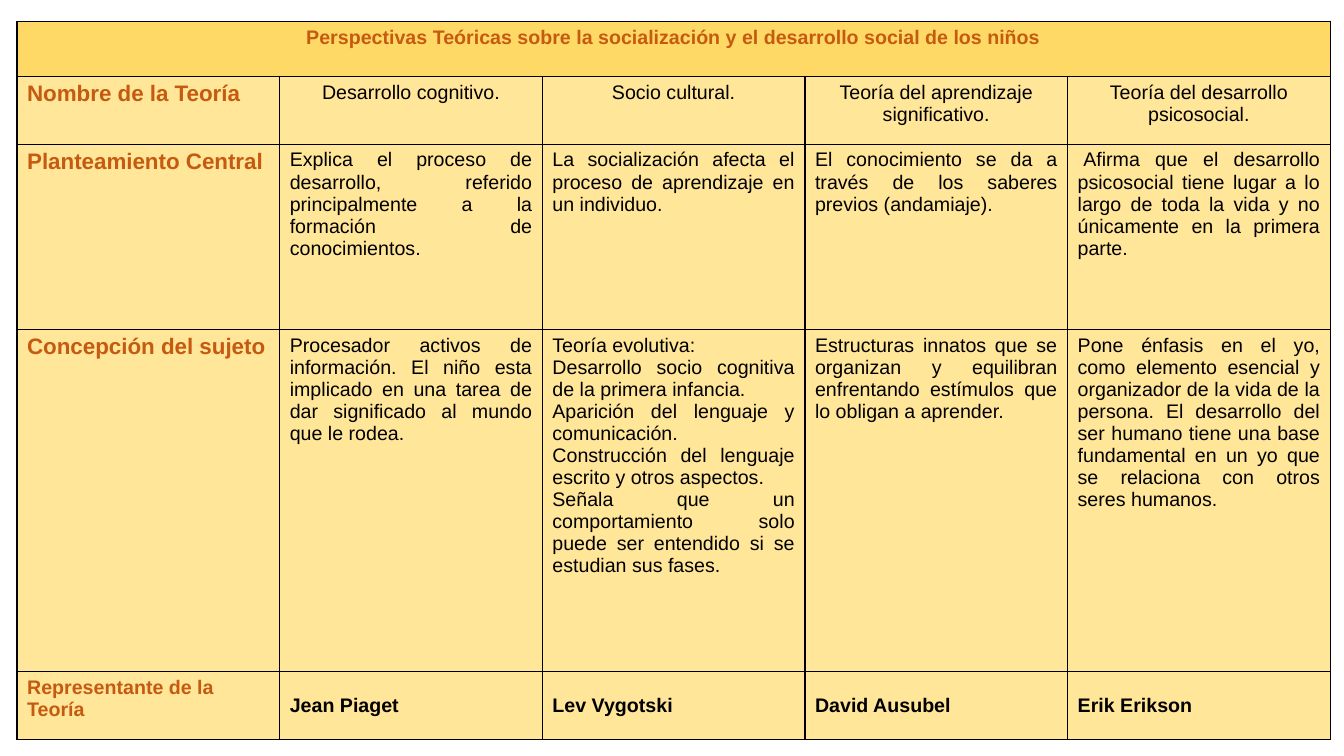
import lxml.etree
import pptx
import pptx.dml.color
import pptx.enum.text
import pptx.oxml.ns
import pptx.util

ALIGN = pptx.enum.text.PP_ALIGN
ANCHOR = pptx.enum.text.MSO_ANCHOR
RUST, BLACK, GOLD, CREAM = "C55A11", "000000", "FFD966", "FFE699"

TITLE = "Perspectivas Teóricas sobre la socialización y el desarrollo social de los niños"
LABELS = ["Nombre de la Teoría", "Planteamiento Central",
          "Concepción del sujeto", "Representante de la Teoría"]
NAMES = ["Desarrollo cognitivo.", "Socio cultural.",
         "Teoría del aprendizaje significativo.",
         "Teoría del desarrollo psicosocial."]
IDEAS = [
    "Explica el proceso de desarrollo, referido principalmente a la formación de conocimientos.",
    "La socialización afecta el proceso de aprendizaje en un individuo.",
    "El conocimiento se da a través de los saberes previos (andamiaje).",
    "Afirma que el desarrollo psicosocial tiene lugar a lo largo de toda la vida "
    "y no únicamente en la primera parte.",
]
VIEWS = [
    "Procesador activos de información. El niño esta implicado en una tarea de "
    "dar significado al mundo que le rodea.",
    "Teoría evolutiva:\n"
    "Desarrollo socio cognitiva de la primera infancia.\n"
    "Aparición del lenguaje y comunicación.\n"
    "Construcción del lenguaje escrito y otros aspectos.\n"
    "Señala que un comportamiento solo puede ser entendido si se estudian sus fases.",
    "Estructuras innatos que se organizan y equilibran enfrentando estímulos "
    "que lo obligan a aprender.",
    "Pone énfasis en el yo, como elemento esencial y organizador de la vida de la "
    "persona. El desarrollo del ser humano tiene una base fundamental en un yo "
    "que se relaciona con otros seres humanos.",
]
PEOPLE = ["Jean Piaget", "Lev Vygotski", "David Ausubel", "Erik Erikson"]
BODY = [
    (NAMES, {"align": ALIGN.CENTER}),
    (IDEAS, {"align": ALIGN.JUSTIFY}),
    (VIEWS, {"align": ALIGN.JUSTIFY}),
    (PEOPLE, {"align": ALIGN.JUSTIFY, "bold": True}),
]
HEIGHTS = [39.4, 48.4, 132.4, 244.6, 48.6]


def color(code):
    """Turn a hex string into a colour."""
    return pptx.dml.color.RGBColor.from_string(code)


def write(frame, text, size=14, ink=BLACK, bold=False, align=ALIGN.LEFT, indent=0):
    """Fill a text frame with one paragraph per line of text."""
    for n, line in enumerate(text.split("\n")):
        para = frame.paragraphs[0] if n == 0 else frame.add_paragraph()
        para.alignment = align
        if indent:
            para._p.get_or_add_pPr().set("indent", str(pptx.util.Pt(indent)))
        run = para.add_run()
        run.text = line
        run.font.name = "Arial"
        run.font.size = pptx.util.Pt(size)
        run.font.bold = bold
        run.font.color.rgb = color(ink)


def paint(cell, fill):
    """Give a cell its fill and four thin black borders."""
    cell.fill.solid()
    cell.fill.fore_color.rgb = color(fill)
    props = cell._tc.get_or_add_tcPr()
    qn = pptx.oxml.ns.qn
    for spot, side in enumerate(["a:lnL", "a:lnR", "a:lnT", "a:lnB"]):
        line = lxml.etree.Element(qn(side), w=str(pptx.util.Pt(1)))
        solid = lxml.etree.SubElement(line, qn("a:solidFill"))
        lxml.etree.SubElement(solid, qn("a:srgbClr"), val=BLACK)
        props.insert(spot, line)


def matrix(slide, left, top, width, heights):
    """Place the table of theories in the given box."""
    cols = len(NAMES) + 1
    frame = slide.shapes.add_table(
        len(heights), cols, pptx.util.Pt(left), pptx.util.Pt(top),
        pptx.util.Pt(width), pptx.util.Pt(sum(heights)))
    table = frame.table
    for col in table.columns:
        col.width = pptx.util.Pt(width / cols)
    for n, height in enumerate(heights):
        table.rows[n].height = pptx.util.Pt(height)
        for col in range(cols):
            paint(table.cell(n, col), CREAM if n else GOLD)

    head = table.cell(0, 0)
    head.merge(table.cell(0, cols - 1))
    write(head.text_frame, TITLE, ink=RUST, bold=True, align=ALIGN.CENTER)

    for row, (label, (texts, style)) in enumerate(zip(LABELS, BODY), 1):
        size = 14 if texts is PEOPLE else 16
        write(table.cell(row, 0).text_frame, label, size=size, ink=RUST, bold=True)
        for col, text in enumerate(texts, 1):
            cell = table.cell(row, col)
            if texts is PEOPLE:
                cell.vertical_anchor = ANCHOR.MIDDLE
            indent = 4 if text is IDEAS[-1] else 0
            write(cell.text_frame, text, indent=indent, **style)


def main():
    """Build the slide and save it."""
    deck = pptx.Presentation()
    deck.slide_width = pptx.util.Pt(960)
    deck.slide_height = pptx.util.Pt(540)
    slide = deck.slides.add_slide(deck.slide_layouts[6])
    matrix(slide, 12.2, 15.2, 938, HEIGHTS)
    deck.save("out.pptx")


if __name__ == "__main__":
    main()
